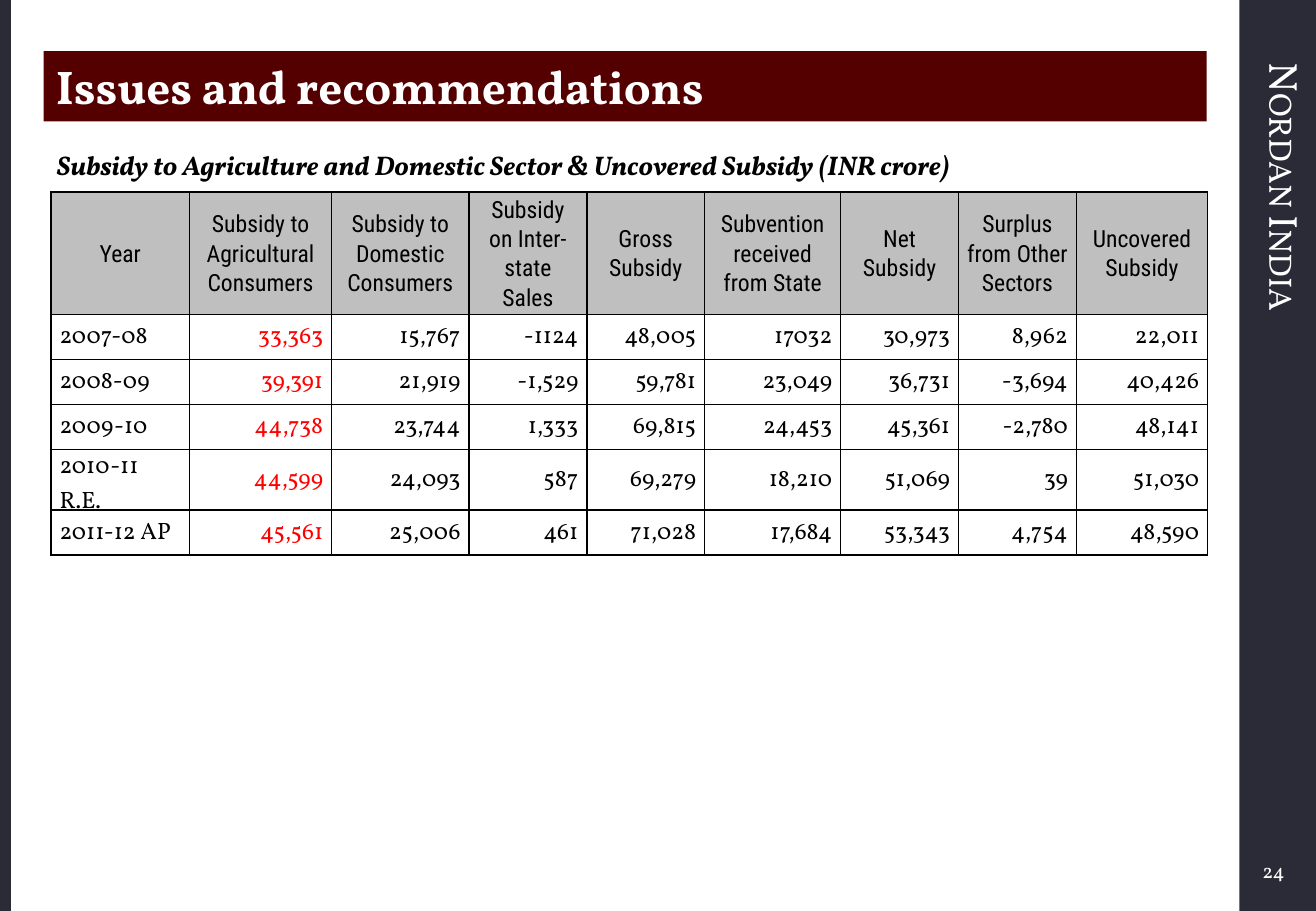
from lxml import etree
from pptx import Presentation
from pptx.dml.color import RGBColor
from pptx.enum.shapes import MSO_SHAPE as Shape
from pptx.enum.text import MSO_ANCHOR as Anchor, MSO_AUTO_SIZE as AutoSize, PP_ALIGN as Align
from pptx.oxml.ns import qn
from pptx.util import Inches, Pt

COLORS = {"white": "FFFFFF", "black": "000000", "red": "FF0000",
          "navy": "2B2B37", "maroon": "540000", "gray": "BFBFBF"}
SERIF, SANS = "Vollkorn", "Roboto Condensed"
WIDTH, HEIGHT = 10.83, 7.5
RAIL = 0.63                   # width of the right-hand band
RAIL_LEFT = WIDTH - RAIL


def color(name):
    return RGBColor.from_string(COLORS[name])


def write(frame, text, size=14, font=SERIF, ink="black", bold=False, italic=False,
          align=Align.LEFT, anchor=Anchor.TOP, spacing=None, wrap=True):
    frame.word_wrap = wrap
    frame.vertical_anchor = anchor
    para = frame.paragraphs[0]
    para.alignment = align
    para.line_spacing = spacing
    span = para.add_run()
    span.text = text
    span.font.name, span.font.size = font, Pt(size)
    span.font.bold, span.font.italic = bold, italic
    span.font.color.rgb = color(ink)
    return span


deck = Presentation()
deck.slide_width, deck.slide_height = Inches(WIDTH), Inches(HEIGHT)
page = deck.slides.add_slide(deck.slide_layouts[5])

# Side bands
for left, width in ((RAIL_LEFT, RAIL), (0, 0.09)):
    band = page.shapes.add_shape(Shape.RECTANGLE, Inches(left), 0,
                                 Inches(width), deck.slide_height)
    band.shadow.inherit = False
    band.fill.solid()
    band.fill.fore_color.rgb = color("navy")
    band.line.fill.background()

# Vertical name in small capitals
name_box = page.shapes.add_textbox(Inches(RAIL_LEFT), Inches(0.42), Inches(RAIL), Inches(6.42))
name = write(name_box.text_frame, "Nordan India", size=24, ink="white")
name.font._element.set("cap", "small")
name_box.text_frame._txBody.bodyPr.set("vert", "vert")

# Page number
number_box = page.shapes.add_textbox(Inches(9.5), Inches(7), Inches(1.17), Inches(0.33))
write(number_box.text_frame, "24", size=12, ink="white", align=Align.RIGHT, anchor=Anchor.MIDDLE)

# Title bar
title = page.shapes.title
title.left, title.top = Inches(0.36), Inches(0.42)
title.width, title.height = Inches(9.57), Inches(0.58)
title.fill.solid()
title.fill.fore_color.rgb = color("maroon")
write(title.text_frame, "Issues and recommendations", size=28, ink="white", bold=True)
title.text_frame.auto_size = AutoSize.NONE

# Table caption
caption = page.shapes.add_textbox(Inches(0.37), Inches(1.17), Inches(7.97), Inches(0.37))
write(caption.text_frame,
      "Subsidy to Agriculture and Domestic Sector & Uncovered Subsidy (INR crore)",
      size=16, bold=True, italic=True, wrap=False)

# Subsidy table
ROWS = [
    ["Year", "Subsidy to Agricultural Consumers", "Subsidy to Domestic Consumers",
     "Subsidy on Inter-state Sales", "Gross Subsidy", "Subvention received from State",
     "Net Subsidy", "Surplus from Other Sectors", "Uncovered Subsidy"],
    ["2007-08", "33,363", "15,767", "-1124", "48,005", "17032", "30,973", "8,962", "22,011"],
    ["2008-09", "39,391", "21,919", "-1,529", "59,781", "23,049", "36,731", "-3,694", "40,426"],
    ["2009-10", "44,738", "23,744", "1,333", "69,815", "24,453", "45,361", "-2,780", "48,141"],
    ["2010-11 R.E.", "44,599", "24,093", "587", "69,279", "18,210", "51,069", "39", "51,030"],
    ["2011-12 AP", "45,561", "25,006", "461", "71,028", "17,684", "53,343", "4,754", "48,590"],
]
COLUMN_WIDTHS = [1.14, 1.17, 1.13, 0.97, 0.97, 1.12, 0.97, 0.97, 1.08]
ROW_HEIGHTS = [1.01, 0.37, 0.37, 0.37, 0.5, 0.37]

table = page.shapes.add_table(len(ROWS), len(COLUMN_WIDTHS), Inches(0.42), Inches(1.58),
                              Inches(sum(COLUMN_WIDTHS)), Inches(sum(ROW_HEIGHTS))).table
table.horz_banding = False
for column, width in zip(table.columns, COLUMN_WIDTHS):
    column.width = Inches(width)
for row, height in zip(table.rows, ROW_HEIGHTS):
    row.height = Inches(height)

for r, texts in enumerate(ROWS):
    for c, text in enumerate(texts):
        cell = table.cell(r, c)
        header = r == 0
        cell.margin_left = cell.margin_right = Inches(0.07)
        cell.margin_top = cell.margin_bottom = 0
        cell.vertical_anchor = Anchor.MIDDLE

        # Borders come before the fill in the cell properties
        properties = cell._tc.get_or_add_tcPr()
        for side in ("lnL", "lnR", "lnT", "lnB"):
            border = etree.SubElement(properties, qn(f"a:{side}"), w=str(Pt(1)))
            fill = etree.SubElement(border, qn("a:solidFill"))
            etree.SubElement(fill, qn("a:srgbClr"), val=COLORS["black"])
        if header:
            cell.fill.solid()
            cell.fill.fore_color.rgb = color("gray")
        else:
            cell.fill.background()

        write(cell.text_frame, text, spacing=1.05, anchor=Anchor.MIDDLE,
              font=SANS if header else SERIF,
              ink="red" if c == 1 and not header else "black",
              align=Align.CENTER if header else Align.RIGHT if c else Align.LEFT)

deck.save("out.pptx")
